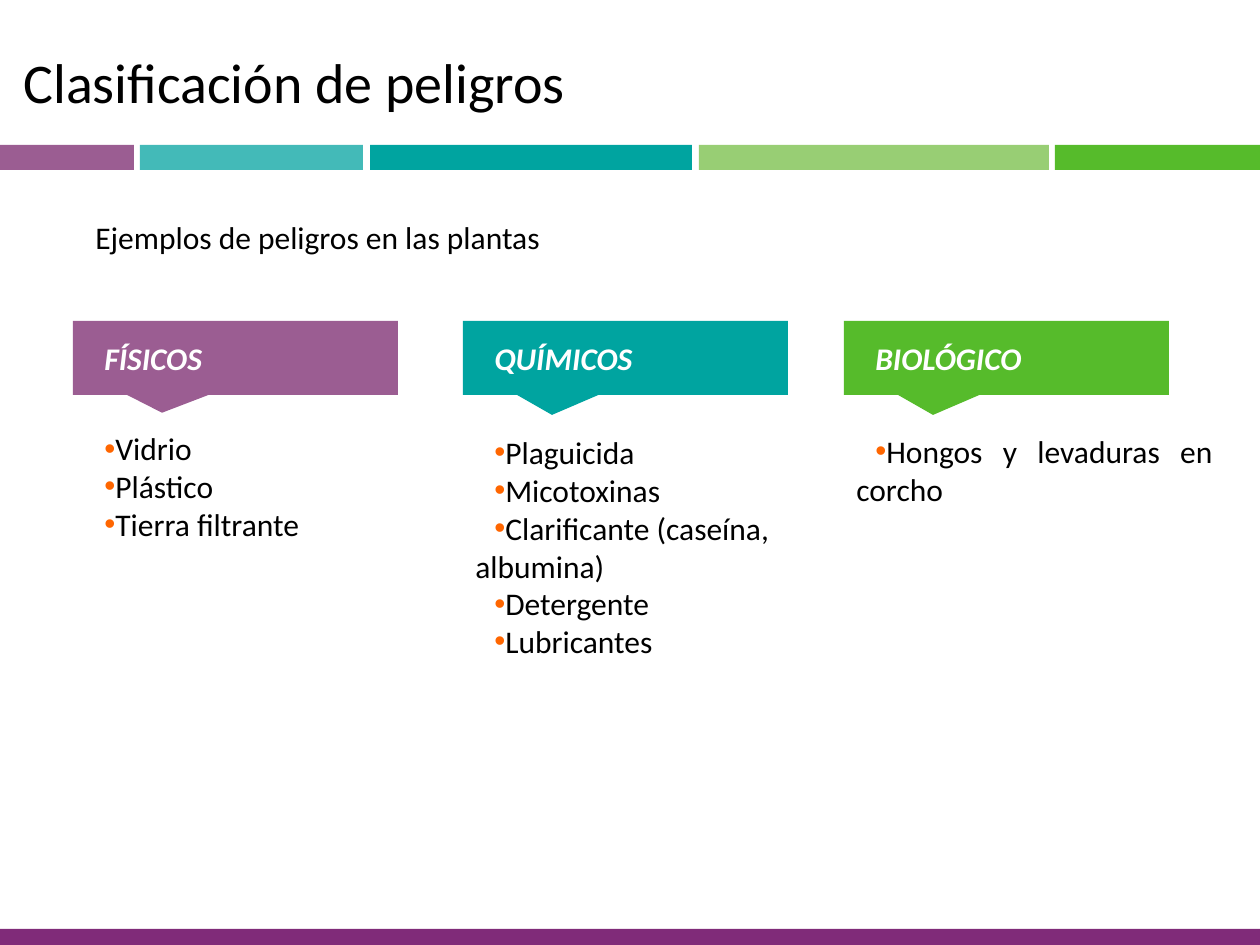
from dataclasses import dataclass

from lxml.etree import SubElement
from pptx import Presentation
from pptx.dml.color import RGBColor
from pptx.enum.shapes import MSO_SHAPE
from pptx.enum.text import MSO_ANCHOR, PP_ALIGN
from pptx.oxml.ns import qn
from pptx.util import Emu, Pt

COLORS = {
    "purple": "9B5D92", "aqua": "43BAB8", "teal": "00A4A0",
    "lime": "98CE74", "green": "56BB2B", "plum": "802B79",
    "orange": "FF6600", "black": "000000", "white": "FFFFFF",
}
FONT = "Calibri"
INDENT = 19
BAR_TOP, BAR_HEIGHT = 145, 25
HEADER_TOP, HEADER_WIDTH, HEADER_HEIGHT = 321, 325, 74


@dataclass
class Bar:
    left: int
    width: int
    color: str
    top: int = BAR_TOP
    height: int = BAR_HEIGHT


@dataclass
class Column:
    left: int
    color: str
    header: str
    pointer: float
    list_top: int
    list_width: int
    list_height: int
    align: PP_ALIGN
    items: list[str]


BARS = [
    Bar(0, 134, "purple"),
    Bar(140, 223, "aqua"),
    Bar(370, 322, "teal"),
    Bar(699, 350, "lime"),
    Bar(1055, 205, "green"),
    Bar(0, 1260, "plum", 929, 16),
]
COLUMNS = [
    Column(73, "purple", "FÍSICOS", 0.74, 423, 437, 344, PP_ALIGN.JUSTIFY,
           ["Vidrio", "Plástico", "Tierra filtrante"]),
    Column(463, "teal", "QUÍMICOS", 0.77, 427, 410, 318, PP_ALIGN.LEFT,
           ["Plaguicida", "Micotoxinas", "Clarificante (caseína, albumina)",
            "Detergente", "Lubricantes"]),
    Column(844, "green", "BIOLÓGICO", 0.77, 426, 381, 127, PP_ALIGN.JUSTIFY,
           ["Hongos y levaduras en corcho"]),
]


def px(n: int) -> Emu:
    return Emu(round(n * 914400 / 126))


def rgb(name: str) -> RGBColor:
    return RGBColor.from_string(COLORS[name])


def format_runs(p, size: int = 18, color: str = "black", strong: bool = False) -> None:
    for r in p.runs:
        r.font.name = FONT
        r.font.size = Pt(size)
        r.font.color.rgb = rgb(color)
        if strong:
            r.font.bold = r.font.italic = True


def indent_first_line(p):
    pPr = p._p.get_or_add_pPr()
    pPr.set("marL", "0")
    pPr.set("indent", str(px(INDENT)))
    return pPr


def add_bullet(p) -> None:
    pPr = indent_first_line(p)
    clr = SubElement(pPr, qn("a:buClr"))
    SubElement(clr, qn("a:srgbClr")).set("val", COLORS["orange"])
    SubElement(pPr, qn("a:buFont")).set("typeface", "Arial")
    SubElement(pPr, qn("a:buChar")).set("char", "•")


def add_filled(slide, kind, left: int, top: int, width: int, height: int, color: str):
    sp = slide.shapes.add_shape(kind, px(left), px(top), px(width), px(height))
    sp.shadow.inherit = False
    sp.fill.solid()
    sp.fill.fore_color.rgb = rgb(color)
    sp.line.fill.background()
    return sp


def add_text(slide, left: int, top: int, width: int, height: int, text: str, size: int = 18):
    sp = slide.shapes.add_textbox(px(left), px(top), px(width), px(height))
    tf = sp.text_frame
    tf.word_wrap = True
    tf.text = text
    for p in tf.paragraphs:
        format_runs(p, size)
    return tf


def add_column(slide, col: Column) -> None:
    tf = add_text(slide, col.left, col.list_top, col.list_width, col.list_height,
                  "\n".join(col.items))
    for p in tf.paragraphs:
        p.alignment = col.align
        add_bullet(p)

    sp = add_filled(slide, MSO_SHAPE.RECTANGULAR_CALLOUT, col.left, HEADER_TOP,
                    HEADER_WIDTH, HEADER_HEIGHT, col.color)
    sp.adjustments[0] = -0.226
    sp.adjustments[1] = col.pointer
    tf = sp.text_frame
    tf.text = col.header
    tf.vertical_anchor = MSO_ANCHOR.MIDDLE
    p = tf.paragraphs[0]
    p.alignment = PP_ALIGN.LEFT
    indent_first_line(p)
    format_runs(p, color="white", strong=True)


def main() -> None:
    prs = Presentation()
    prs.slide_width, prs.slide_height = px(1260), px(945)
    slide = prs.slides.add_slide(prs.slide_layouts[6])

    # Coloured bands
    for bar in BARS:
        add_filled(slide, MSO_SHAPE.RECTANGLE, bar.left, bar.top,
                   bar.width, bar.height, bar.color)

    # Title and subtitle
    tf = add_text(slide, 11, 6, 955, 158, "Clasificación de peligros", 32)
    tf.vertical_anchor = MSO_ANCHOR.MIDDLE
    tf.paragraphs[0].line_spacing = 0.9
    add_text(slide, 83, 212, 593, 63, "Ejemplos de peligros en las plantas")

    # Hazard columns
    for col in COLUMNS:
        add_column(slide, col)

    prs.save("out.pptx")


if __name__ == "__main__":
    main()
